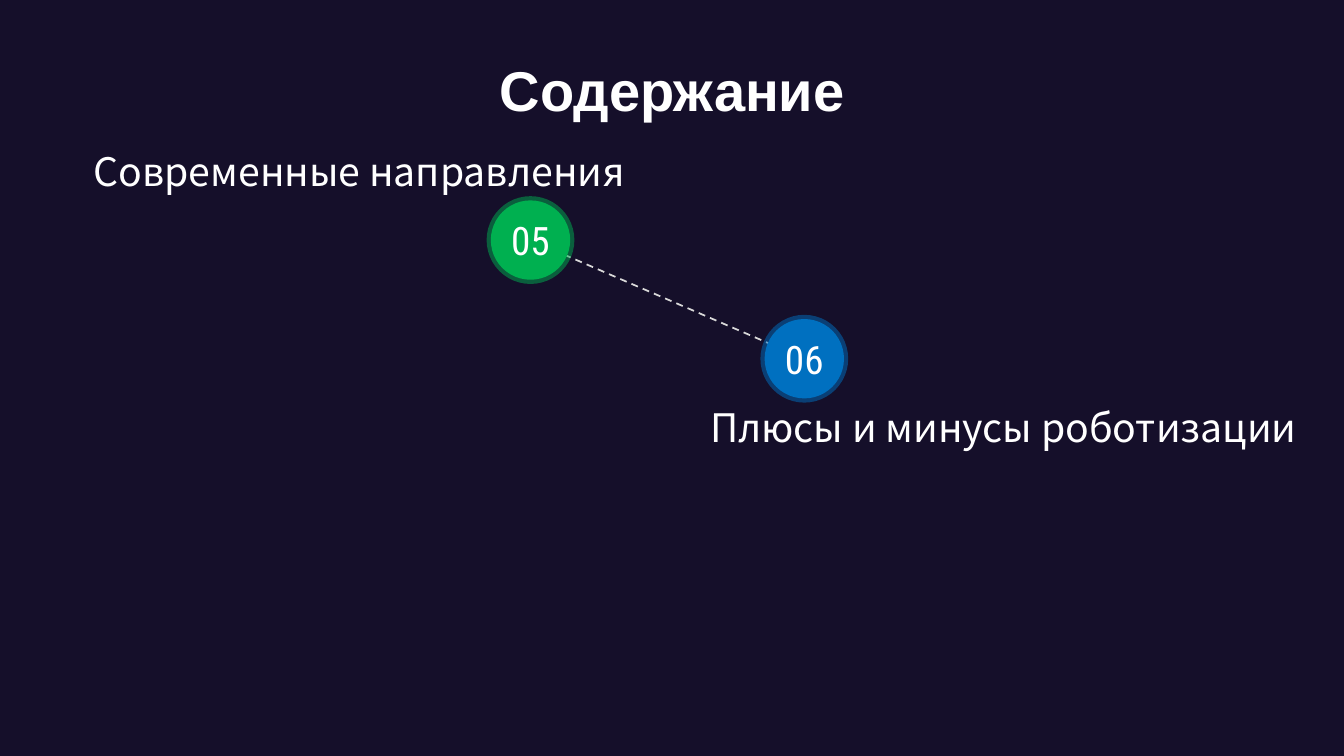
from lxml.etree import SubElement
from pptx import Presentation
from pptx.dml.color import RGBColor
from pptx.enum.dml import MSO_LINE
from pptx.enum.shapes import MSO_CONNECTOR, MSO_SHAPE
from pptx.enum.text import MSO_ANCHOR, MSO_AUTO_SIZE, PP_ALIGN
from pptx.oxml.ns import qn
from pptx.util import Cm, Pt

NIGHT = RGBColor(0x15, 0x0F, 0x2A)
WHITE = RGBColor(0xFF, 0xFF, 0xFF)
GREY = RGBColor(0xD9, 0xD9, 0xD9)
GREEN = RGBColor(0x00, 0xB0, 0x50)
BLUE = RGBColor(0x00, 0x70, 0xC0)
CIRCLE_SIZE = Cm(2)
LABEL_HEIGHT = Cm(1.44)
LABEL_OVERHANG = Cm(2.62)


def write(shape, text, font_name, size, align, bold=False):
    frame = shape.text_frame
    frame.text = text
    para = frame.paragraphs[0]
    para.alignment = align
    para.font.name = font_name
    para.font.size = Pt(size)
    para.font.bold = bold
    para.font.color.rgb = WHITE
    return frame


def place_title(page, left, top, width, height):
    title = page.shapes.title
    title.left, title.top, title.width, title.height = left, top, width, height
    frame = write(title, "Содержание", "Arial", 40, PP_ALIGN.CENTER, bold=True)
    frame.word_wrap = False
    frame.auto_size = MSO_AUTO_SIZE.SHAPE_TO_FIT_TEXT
    frame.vertical_anchor = MSO_ANCHOR.TOP


def add_link(page, start, end):
    link = page.shapes.add_connector(MSO_CONNECTOR.STRAIGHT, *start, *end)
    link.line.color.rgb = GREY
    link.line.width = Pt(1.25)
    link.line.dash_style = MSO_LINE.DASH
    SubElement(link._element.spPr, qn("a:effectLst"))


def add_circle(page, center, number, color):
    """Draw a numbered circle with a half-transparent rim."""
    x, y = center
    circle = page.shapes.add_shape(MSO_SHAPE.OVAL, x - CIRCLE_SIZE // 2, y - CIRCLE_SIZE // 2,
                                   CIRCLE_SIZE, CIRCLE_SIZE)
    circle.shadow.inherit = False
    circle.fill.solid()
    circle.fill.fore_color.rgb = color
    circle.line.color.rgb = color
    circle.line.width = Pt(6)
    rim_color = circle.line._ln.find(".//" + qn("a:srgbClr"))
    SubElement(rim_color, qn("a:alpha"), val="50000")
    frame = write(circle, number, "Roboto Condensed", 28, PP_ALIGN.CENTER)
    frame.margin_left = frame.margin_right = frame.margin_top = frame.margin_bottom = 0
    frame.vertical_anchor = MSO_ANCHOR.MIDDLE
    frame.word_wrap = False


def add_label(page, left, top, width, text, align):
    label = page.shapes.add_textbox(left, top, width, LABEL_HEIGHT)
    frame = write(label, text, "Noto Sans CJK SC", 28, align)
    frame.word_wrap = True
    frame.auto_size = MSO_AUTO_SIZE.SHAPE_TO_FIT_TEXT


def add_route(page, start, end):
    """Link two numbered topics, the first labelled above and the second below."""
    add_link(page, start, end)
    add_circle(page, start, "05", GREEN)
    add_circle(page, end, "06", BLUE)
    add_label(page, end[0] - LABEL_OVERHANG, end[1] + Cm(0.99), Cm(19.3),
              "Плюсы и минусы роботизации", PP_ALIGN.LEFT)
    above_width = Cm(18.31)
    add_label(page, start[0] + LABEL_OVERHANG - above_width, start[1] - Cm(2.47), above_width,
              "Современные направления", PP_ALIGN.RIGHT)


def main():
    deck = Presentation()
    deck.slide_width, deck.slide_height = Cm(33.87), Cm(19.05)
    page = deck.slides.add_slide(deck.slide_layouts[5])
    page.background.fill.solid()
    page.background.fill.fore_color.rgb = NIGHT
    place_title(page, Cm(12.29), Cm(1.27), Cm(9.3), Cm(1.96))
    add_route(page, (Cm(13.37), Cm(6.05)), (Cm(20.27), Cm(9.04)))
    deck.save("out.pptx")


if __name__ == "__main__":
    main()
